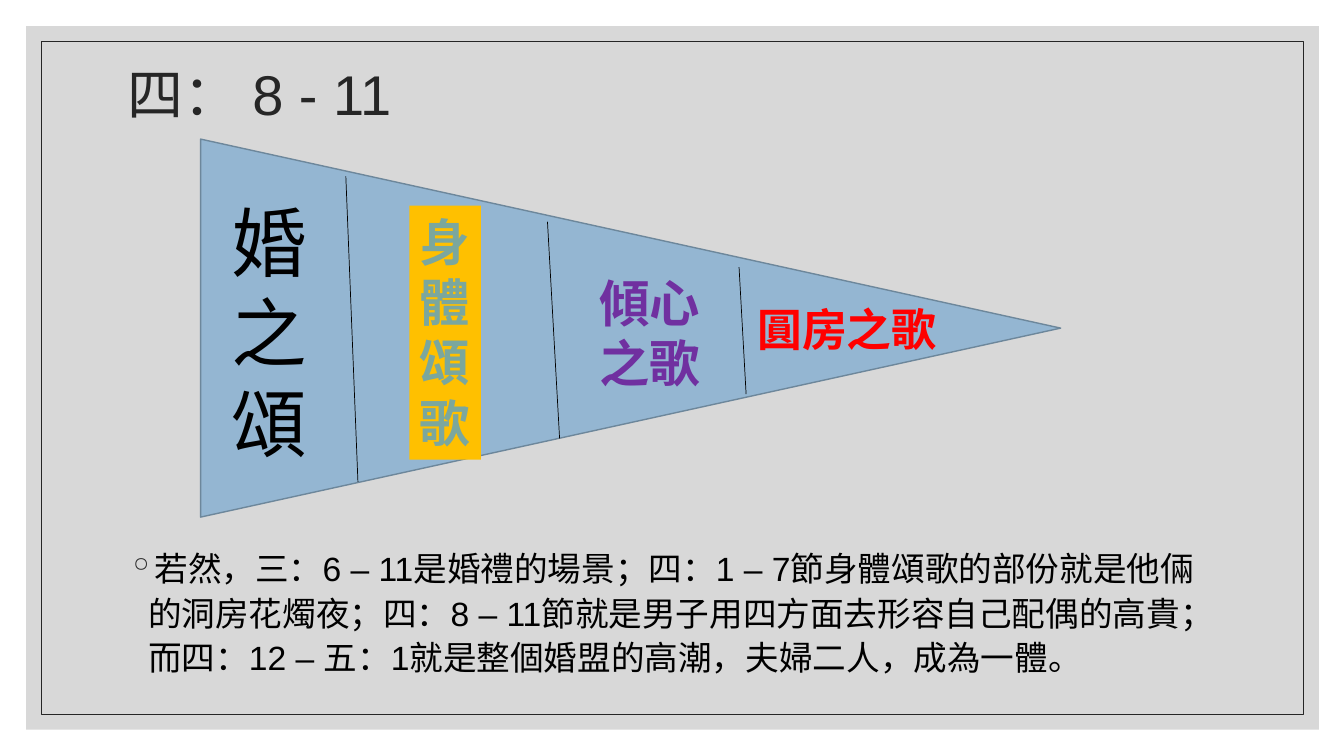
"""Build the slide with the narrowing wedge of songs."""
from typing import NamedTuple, Optional

from lxml.etree import SubElement
from pptx import Presentation
from pptx.dml.color import RGBColor
from pptx.enum.shapes import MSO_CONNECTOR as Link, MSO_SHAPE as Kind
from pptx.enum.text import MSO_ANCHOR as Anchor, MSO_AUTO_SIZE as Fit, PP_ALIGN as Align
from pptx.oxml.ns import qn
from pptx.util import Inches, Pt

BLACK = RGBColor(0x00, 0x00, 0x00)
INK = RGBColor(0x26, 0x26, 0x26)
GREY = RGBColor(0xBF, 0xBF, 0xBF)
BLUE = RGBColor(0x94, 0xB6, 0xD2)
EDGE = RGBColor(0x6D, 0x87, 0x9B)
GOLD = RGBColor(0xFF, 0xC0, 0x00)
SAGE = RGBColor(0x7B, 0xA7, 0x9D)
PURPLE = RGBColor(0x70, 0x30, 0xA0)
RED = RGBColor(0xFF, 0x00, 0x00)
FONT = "Arial"

Box = tuple[float, float, float, float]


class Song(NamedTuple):
    at: Box
    lines: list[str]
    size: int
    color: RGBColor
    bold: bool = True
    fill: Optional[RGBColor] = None


class Rule(NamedTuple):
    start: tuple[float, float]
    end: tuple[float, float]


SONGS = [
    Song((2.19, 1.89, 0.96, 2.83), ["婚", "之", "頌"], 54, BLACK, bold=False),
    Song((4.06, 2.04, 0.71, 2.52), ["身", "體", "頌", "歌"], 36, SAGE, fill=GOLD),
    Song((5.84, 2.65, 1.21, 1.31), ["傾心", "之歌"], 36, PURPLE),
    Song((7.4, 2.94, 2, 0.64), ["圓房之歌"], 32, RED),
]
RULES = [
    Rule((3.43, 1.75), (3.55, 4.78)),
    Rule((5.43, 2.2), (5.55, 4.35)),
    Rule((7.33, 2.65), (7.4, 3.91)),
]
TITLE = "四： 8 - 11"
NOTE = (
    "若然，三：6 – 11是婚禮的場景；四：1 – 7節身體頌歌的部份就是他倆的洞房花燭夜；"
    "四：8 – 11節就是男子用四方面去形容自己配偶的高貴；"
    "而四：12 – 五：1就是整個婚盟的高潮，夫婦二人，成為一體。"
)


def style(para, size: float, color: RGBColor, bold: bool = False) -> None:
    """Set the font of a whole paragraph."""
    font = para.font
    font.name, font.size, font.bold = FONT, Pt(size), bold
    font.color.rgb = color


def add_form(slide, kind: Kind, at: Box, fill: Optional[RGBColor] = None,
             line: Optional[RGBColor] = None, width: float = 0.5):
    """Add a preset shape with a plain fill and line."""
    form = slide.shapes.add_shape(kind, *map(Inches, at))
    form.shadow.inherit = False
    if fill is None:
        form.fill.background()
    else:
        form.fill.solid()
        form.fill.fore_color.rgb = fill
    if line is None:
        form.line.fill.background()
    else:
        form.line.color.rgb = line
        form.line.width = Pt(width)
    return form


def add_text(slide, at: Box, text: str, size: float, color: RGBColor, space: float):
    """Add a wrapping text box with one paragraph and return its frame."""
    frame = slide.shapes.add_textbox(*map(Inches, at)).text_frame
    frame.word_wrap = True
    para = frame.paragraphs[0]
    para.text = text
    para.line_spacing = space
    style(para, size, color)
    return frame


def add_bullet(para, mark: str, color: RGBColor, indent: float) -> None:
    """Give a paragraph a hanging bullet."""
    props = para._p.get_or_add_pPr()
    props.set("marL", str(Inches(indent)))
    props.set("indent", str(-Inches(indent)))
    tint = props.makeelement(qn("a:buClr"))
    SubElement(tint, qn("a:srgbClr"), val=str(color))
    char = props.makeelement(qn("a:buChar"), {"char": mark})
    font = props.find(qn("a:defRPr"))
    font.addprevious(tint)
    font.addprevious(char)


def add_song(slide, song: Song) -> None:
    """Add a label of the wedge, one paragraph a line."""
    if song.fill is None:
        box = slide.shapes.add_textbox(*map(Inches, song.at))
    else:
        box = add_form(slide, Kind.RECTANGLE, song.at, song.fill)
    frame = box.text_frame
    frame.text = "\n".join(song.lines)
    frame.word_wrap = False
    frame.auto_size = Fit.SHAPE_TO_FIT_TEXT
    frame.vertical_anchor = Anchor.TOP
    for para in frame.paragraphs:
        para.alignment = Align.CENTER
        style(para, song.size, song.color, song.bold)


def add_rule(slide, rule: Rule) -> None:
    """Add a thin dividing line."""
    ends = map(Inches, rule.start + rule.end)
    line = slide.shapes.add_connector(Link.STRAIGHT, *ends)
    line.line.color.rgb = BLACK
    line.line.width = Pt(0.5)
    SubElement(line._element.spPr, qn("a:effectLst"))


def main() -> None:
    """Draw the slide and save it."""
    deck = Presentation()
    deck.slide_width, deck.slide_height = Inches(13.33), Inches(7.5)
    slide = deck.slides.add_slide(deck.slide_layouts[6])

    panel = add_form(slide, Kind.RECTANGLE, (0.26, 0.26, 12.82, 6.98), GREY)
    tint = panel._element.spPr.find(qn("a:solidFill"))[0]
    SubElement(tint, qn("a:alpha"), val="60000")
    add_form(slide, Kind.RECTANGLE, (0.41, 0.41, 12.52, 6.68), line=INK)

    title = add_text(slide, (1.17, 0.49, 11, 0.95), TITLE, 40, INK, 0.9)
    title.vertical_anchor = Anchor.MIDDLE
    note = add_text(slide, (1.17, 5.35, 11, 1.56), NOTE, 24, BLACK, 1.1)
    add_bullet(note.paragraphs[0], "◦", INK, 0.2)

    wedge = add_form(slide, Kind.FLOWCHART_MERGE, (4.38, -1.01, 3.75, 8.53), BLUE, EDGE, 1)
    wedge.rotation = 270
    for rule in RULES:
        add_rule(slide, rule)
    for song in SONGS:
        add_song(slide, song)
    deck.save("out.pptx")


if __name__ == "__main__":
    main()
